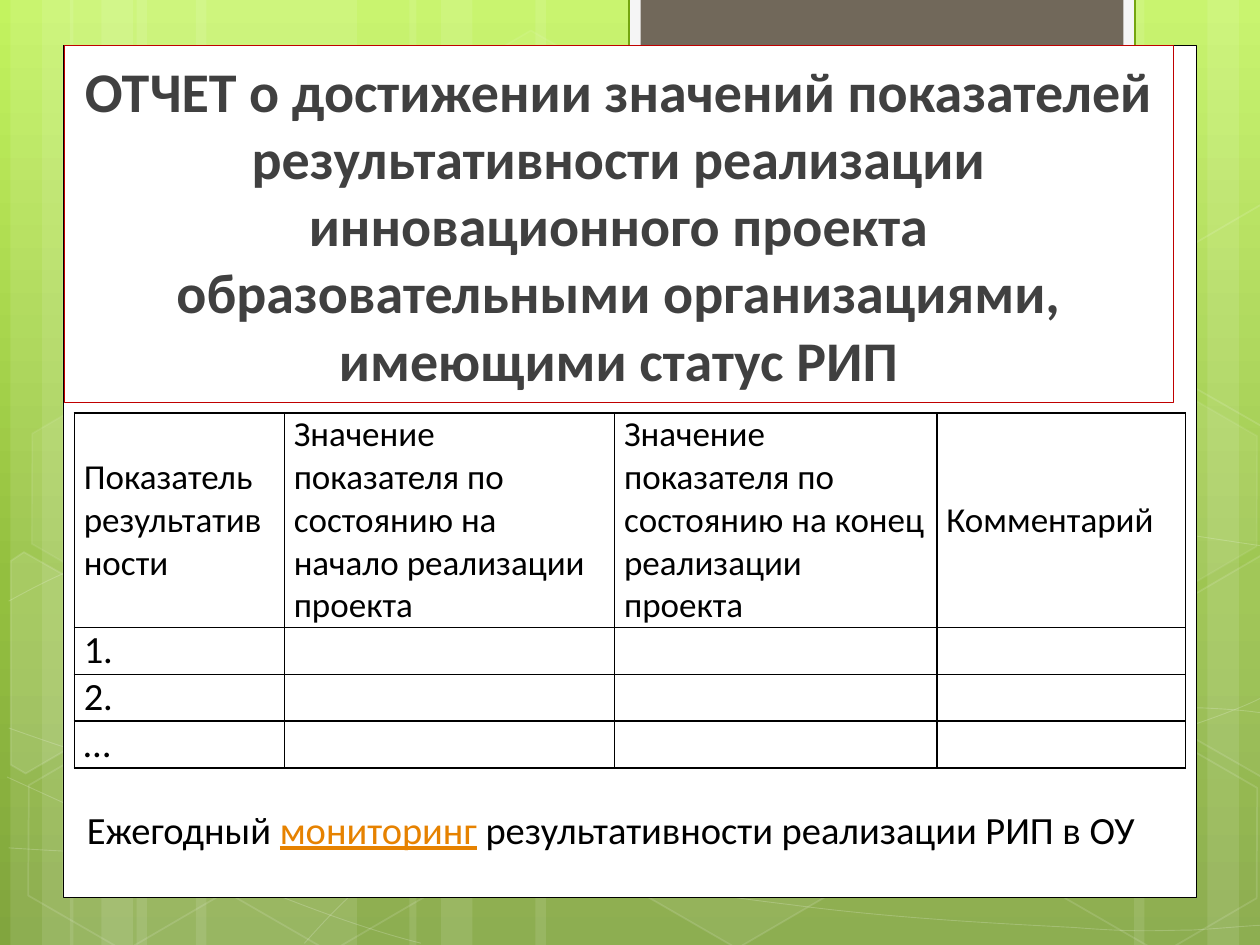
from copy import deepcopy
from dataclasses import dataclass
from math import cos, radians, sin

from lxml.etree import SubElement
from pptx import Presentation
from pptx.dml.color import RGBColor as Rgb
from pptx.enum.shapes import MSO_SHAPE as Preset
from pptx.enum.text import MSO_ANCHOR as Anchor, MSO_AUTO_SIZE as AutoSize, PP_ALIGN as Align
from pptx.oxml.ns import qn
from pptx.util import Pt


@dataclass(frozen=True)
class Theme:
    font: str = "Calibri"
    white: str = "FFFFFF"
    black: str = "000000"
    title: str = "404040"
    title_line: str = "C00000"
    link: str = "E68200"
    tab: str = "71685A"
    tab_frame: str = "F5F5F5"
    tab_line: str = "74A510"
    backdrop: tuple = ((0, "C3F35F"), (0.62, "93BF3F"), (1, "81A53E"))
    title_size: int = 32
    header_size: int = 20
    body_size: int = 22


THEME = Theme()
WIDTH, HEIGHT = 720, 540
TILT = 30

# left, width
STRIPES = [(78, 126), (6, 36), (24, 60), (112, 126), (40, 36), (58, 60),
           (528, 126), (690, 36), (648, 60), (306, 222), (234, 36), (252, 60)]

# start point, then two control points and an end point for each segment
CURVES = [
    [(5, 484.5), (44, 487), (83, 489), (137, 488), (191, 487.5), (258, 486), (330, 479),
     (402, 471.5), (504, 458), (570, 444), (636, 430.5), (703.5, 409), (725, 396.5)],
    [(5, 343.5), (26, 332), (47, 321), (87, 310), (128, 299.5), (186.5, 283.5), (250, 278.5),
     (314, 273.5), (390, 273), (471, 278.5), (550, 284.5), (682, 306.5), (725, 312.5)],
    [(4, 444), (91.5, 484), (178, 523.5), (240.5, 539)],
    [(5, 416), (27.5, 424), (50.5, 432), (92, 443.5), (134, 454.5), (196.5, 472.5),
     (257, 484.5), (317, 497), (392.5, 510), (452, 517), (512, 525), (576, 528), (614, 530),
     (651.5, 533), (661.5, 531.5), (680.5, 531.5), (699, 530.5), (712, 529), (725, 528.5)],
    [(174, 539), (187, 524.5), (200, 510.5), (217.5, 497.5), (235, 484.5), (259, 470),
     (279.5, 460), (299.5, 450), (312, 445.5), (338.5, 438.5), (364, 431), (412.5, 421),
     (438, 416), (463.5, 411), (467.5, 411), (489.5, 409.5), (512, 407.5), (547, 405.5),
     (571.5, 404.5), (597, 404), (638, 404.5), (638, 404.5), (654, 404.5), (670, 404.5),
     (686, 404.5), (699, 405), (711.5, 406), (718, 407), (724, 407.5), (722, 407),
     (724.5, 407.5)],
]

# left, top, fill opacity, line opacity
HEXAGONS = [(240.5, 26, 4, 8), (358, 424, 6, 12), (8, 425.5, None, 12), (10, 224.5, 7, 8),
            (125.5, 426, None, 12), (542, 326, 10, 12), (600.5, 427, None, 12),
            (600.5, 226, 7, 8)]

# hexagons cut by the slide edge
LEFT_CUT = [(6, 320.5), (13.5, 315.5), (69, 347), (68.5, 410.5), (14.5, 442), (6, 437)]
LEFT_CENTER = (26, 385)
RIGHT_CUT = [(666.5, 349), (720.5, 317.5), (726.5, 321), (726.5, 441.5), (721.5, 444),
             (666.5, 412.5)]
RIGHT_CENTER = (709, 374.5)
CUT_GAP = 200.5

TITLE = ("ОТЧЕТ о достижении значений показателей результативности реализации "
         "инновационного проекта образовательными организациями, имеющими статус РИП")
HEADERS = ["Показатель результативности",
           "Значение показателя по состоянию на начало реализации проекта",
           "Значение показателя по состоянию на конец реализации проекта",
           "Комментарий"]
ROW_LABELS = ["1.", "2.", "…"]
COLUMN_WIDTHS = [120, 188.75, 184.25, 142]
HEADER_HEIGHT, ROW_HEIGHT = 122.5, 26.75


def apply(target, values):
    for name, value in values.items():
        setattr(target, name, value)


def paint(fill, color, opacity=100):
    if opacity is None:
        fill.background()
        return
    fill.solid()
    fill.fore_color.rgb = Rgb.from_string(color)
    if opacity < 100:
        tint = fill._xPr.find(".//" + qn("a:srgbClr"))
        SubElement(tint, qn("a:alpha"), val=str(opacity * 1000))


def style(shape, color, opacity=100, line=None, line_width=1, line_opacity=100):
    shape.shadow.inherit = False
    paint(shape.fill, color, opacity)
    if line:
        shape.line.width = Pt(line_width)
        paint(shape.line.fill, line, line_opacity)
    else:
        shape.line.fill.background()


def add_preset(page, preset, area, color, **look):
    shape = page.shapes.add_shape(preset, *map(Pt, area))
    style(shape, color, **look)
    return shape


def add_outline(page, points, closed, **look):
    start, *rest = [(Pt(x), Pt(y)) for x, y in points]
    builder = page.shapes.build_freeform(*start)
    builder.add_line_segments(rest, close=closed)
    shape = builder.convert_to_shape()
    style(shape, THEME.white, line=THEME.white, **look)
    return shape


def add_curve(page, knots):
    shape = add_outline(page, knots, False, opacity=None, line_width=0.5, line_opacity=20)
    outline = shape._element.find(".//" + qn("a:path"))
    lines = outline.findall(qn("a:lnTo"))
    for first in range(0, len(lines), 3):
        cubic = SubElement(outline, qn("a:cubicBezTo"))
        for line in lines[first:first + 3]:
            cubic.append(line[0])
            outline.remove(line)


def add_cut_hexagon(page, points, center, opacity):
    """Turn the points back around the center, then tilt the whole shape."""
    c, s = cos(radians(TILT)), sin(radians(TILT))
    offsets = [(x - center[0], y - center[1]) for x, y in points]
    upright = [(center[0] + x * c + y * s, center[1] - x * s + y * c) for x, y in offsets]
    add_outline(page, upright, True, opacity=opacity, line_opacity=12).rotation = TILT


def write(para, text, size, color=THEME.black, **more):
    span = para.add_run()
    span.text = text
    apply(span.font, {"name": THEME.font, "size": Pt(size), **more})
    span.font.color.rgb = Rgb.from_string(color)


def set_backdrop(page):
    fill = page.background.fill
    fill.gradient()
    fill.gradient_angle = 270
    stop_list = page._element.find(".//" + qn("a:gsLst"))
    stop_list.insert(1, deepcopy(stop_list[0]))
    for stop, (position, color) in zip(fill.gradient_stops, THEME.backdrop):
        stop.position = position
        stop.color.rgb = Rgb.from_string(color)


def add_decor(page):
    for left, width in STRIPES:
        add_preset(page, Preset.RECTANGLE, (left, 0, width, HEIGHT), THEME.white, opacity=10)
    for knots in CURVES:
        add_curve(page, knots)
    for left, top, opacity, line_opacity in HEXAGONS:
        hexagon = add_preset(page, Preset.HEXAGON, (left, top, 126, 109.5), THEME.white,
                             opacity=opacity, line=THEME.white, line_opacity=line_opacity)
        hexagon.adjustments[0] = 0.285
        hexagon.rotation = TILT
    add_cut_hexagon(page, LEFT_CUT, LEFT_CENTER, 10)
    for rise, opacity in ((0, 4), (CUT_GAP, None)):
        *points, center = [(x, y - rise) for x, y in RIGHT_CUT + [RIGHT_CENTER]]
        add_cut_hexagon(page, points, center, opacity)


def add_panel(page):
    for area, color, look in (
            ((36, 26, 648, 487), THEME.white, {"line": THEME.black, "line_width": 0.5}),
            ((359.25, -1.5, 289.5, 54.5), THEME.tab_frame,
             {"line": THEME.tab_line, "line_width": 1.25}),
            ((366, -1.5, 276, 49), THEME.tab, {})):
        add_preset(page, Preset.RECTANGLE, area, color, **look)
    # the panel covers the lower part of the tab
    shapes = page.shapes._spTree
    shapes.append(page.shapes.title._element)


def add_title(page):
    title = page.shapes.title
    apply(title, {"left": Pt(36.75), "top": Pt(26), "width": Pt(633.75), "height": Pt(204.25)})
    style(title, THEME.white, line=THEME.title_line, line_width=0.75)
    apply(title.text_frame, {"vertical_anchor": Anchor.MIDDLE, "word_wrap": True,
                             "auto_size": AutoSize.NONE})
    para = title.text_frame.paragraphs[0]
    para.alignment = Align.CENTER
    write(para, TITLE, THEME.title_size, THEME.title, bold=True)


def format_cell(cell, anchor, opacity):
    apply(cell, {"margin_left": Pt(5.4), "margin_right": Pt(5.4), "margin_top": 0,
                 "margin_bottom": 0, "vertical_anchor": anchor})
    properties = cell._tc.get_or_add_tcPr()
    for side in ("a:lnL", "a:lnR", "a:lnT", "a:lnB"):
        border = SubElement(properties, qn(side), w=str(Pt(1)))
        SubElement(SubElement(border, qn("a:solidFill")), qn("a:srgbClr"), val=THEME.black)
    paint(cell.fill, THEME.white, opacity)


def add_indicator_table(page):
    heights = [HEADER_HEIGHT] + [ROW_HEIGHT] * len(ROW_LABELS)
    area = (42.5, 236, sum(COLUMN_WIDTHS), sum(heights))
    table = page.shapes.add_table(len(heights), len(HEADERS), *map(Pt, area)).table
    apply(table, {"first_row": False, "horz_banding": False})
    for column, width in zip(table.columns, COLUMN_WIDTHS):
        column.width = Pt(width)
    for number, (row, height) in enumerate(zip(table.rows, heights)):
        row.height = Pt(height)
        for cell in row.cells:
            format_cell(cell, *((Anchor.TOP, None) if number else (Anchor.MIDDLE, 100)))
    for cell, text in zip(table.rows[0].cells, HEADERS):
        write(cell.text_frame.paragraphs[0], text, THEME.header_size)
    for number, text in enumerate(ROW_LABELS, 1):
        write(table.cell(number, 0).text_frame.paragraphs[0], text, THEME.body_size)


def add_monitoring_note(page):
    box = page.shapes.add_textbox(*map(Pt, (42.5, 457, 629.5, 34)))
    apply(box.text_frame, {"word_wrap": True, "auto_size": AutoSize.SHAPE_TO_FIT_TEXT})
    para = box.text_frame.paragraphs[0]
    write(para, "Ежегодный ", THEME.body_size)
    write(para, "мониторинг", THEME.body_size, THEME.link, underline=True)
    write(para, " результативности реализации РИП в ОУ", THEME.body_size)


def main():
    deck = Presentation()
    apply(deck, {"slide_width": Pt(WIDTH), "slide_height": Pt(HEIGHT)})
    page = deck.slides.add_slide(deck.slide_layouts.get_by_name("Title Only"))
    set_backdrop(page)
    for add_part in (add_decor, add_panel, add_title, add_indicator_table, add_monitoring_note):
        add_part(page)
    deck.save("out.pptx")


if __name__ == "__main__":
    main()
